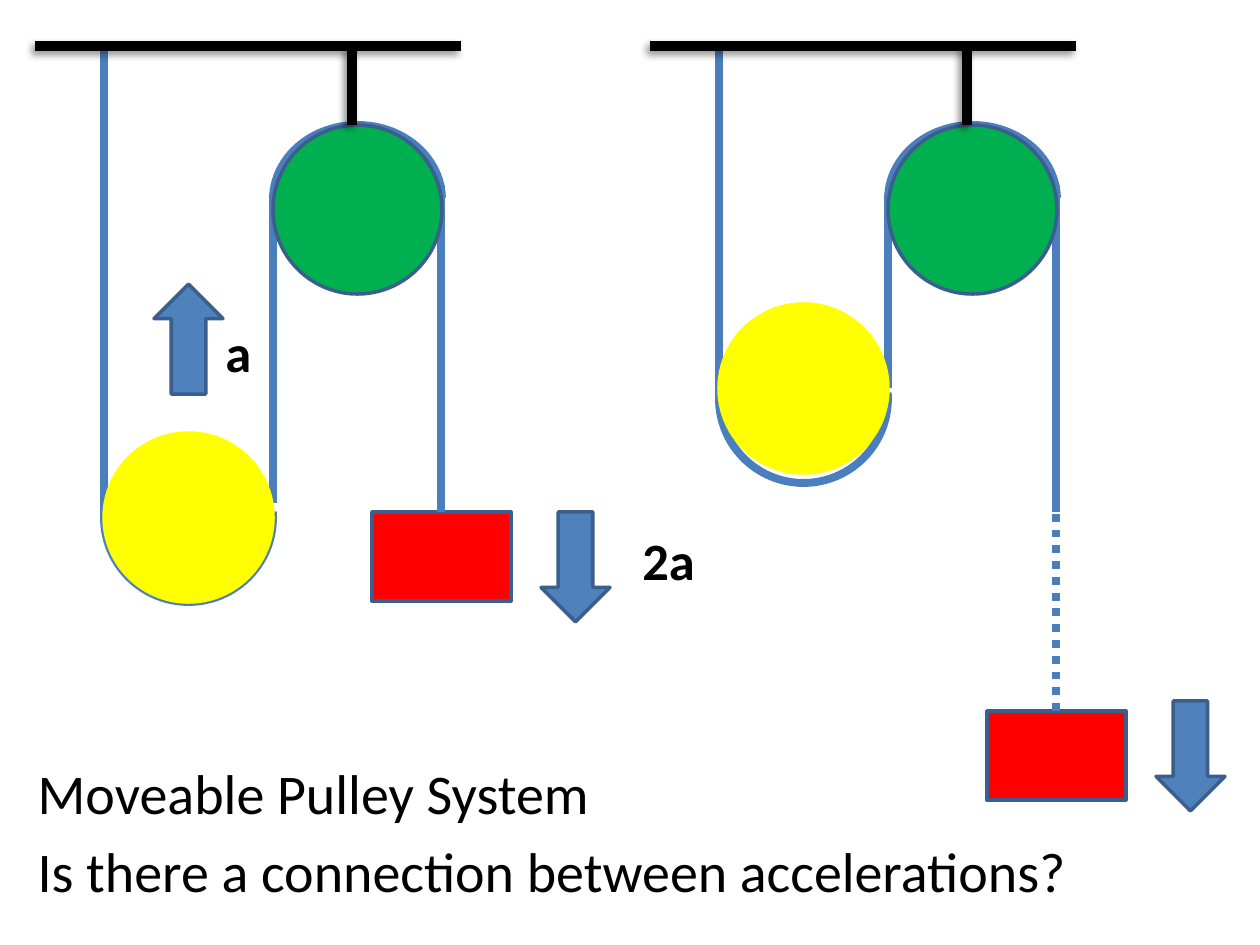
from dataclasses import dataclass

from lxml.etree import SubElement
from pptx import Presentation
from pptx.dml.color import RGBColor
from pptx.enum.dml import MSO_LINE
from pptx.enum.shapes import MSO_CONNECTOR, MSO_SHAPE
from pptx.oxml.ns import qn
from pptx.shapes.autoshape import Shape
from pptx.shapes.connector import Connector
from pptx.slide import Slide
from pptx.util import Emu, Pt

BLACK = RGBColor(0x00, 0x00, 0x00)
RED = RGBColor(0xFF, 0x00, 0x00)
GREEN = RGBColor(0x00, 0xB0, 0x50)
YELLOW = RGBColor(0xFF, 0xFF, 0x00)
BLUE = RGBColor(0x4F, 0x81, 0xBD)
ROPE = RGBColor(0x4B, 0x7E, 0xBC)
OUTLINE = RGBColor(0x3A, 0x5F, 0x8C)

FONT = "Calibri"
DIAMETER = 169
CEILING = 46
PULLEY_TOP = 125
BLOCK_TOP = 512
LEFT, MIDDLE, RIGHT = 104, 273, 441
UPPER_ARC = (105.85, 215.3)
LOWER_ARC = (213.58, 106.53)


@dataclass(frozen=True)
class PulleySystem:
    x: int
    wheel_top: int
    sling_top: int
    left_end: int
    middle_end: int
    block_top: int
    arrow_top: int


@dataclass(frozen=True)
class Label:
    text: str
    x: int
    y: int


SYSTEMS = (
    PulleySystem(0, 433, 433, 522, 503, 512, 512),
    PulleySystem(615, 304, 314, 403, 388, 711, 701),
)
LABELS = (Label("a", 213, 314), Label("2a", 630, 522))
LINES = ("Moveable Pulley System", "Is there a connection between accelerations?")


def px(n: int) -> Emu:
    return Emu(round(n * 914400 / 126))


def add_shape(s: Slide, kind: MSO_SHAPE, box: tuple[int, int, int, int],
              fill: RGBColor, line: RGBColor = OUTLINE) -> Shape:
    sp = s.shapes.add_shape(kind, *map(px, box))
    sp.shadow.inherit = False
    sp.fill.solid()
    sp.fill.fore_color.rgb = fill
    sp.line.color.rgb = line
    sp.line.width = Pt(2)
    return sp


def add_arc(s: Slide, box: tuple[int, int, int, int],
            angles: tuple[float, float]) -> None:
    sp = s.shapes.add_shape(MSO_SHAPE.ARC, *map(px, box))
    sp.shadow.inherit = False
    sp.adjustments[0], sp.adjustments[1] = angles
    sp.fill.background()
    sp.line.color.rgb = ROPE
    sp.line.width = Pt(4.5)


def add_line(s: Slide, ends: tuple[int, int, int, int], color: RGBColor = ROPE,
             width: float = 4.5) -> Connector:
    cxn = s.shapes.add_connector(MSO_CONNECTOR.STRAIGHT, *map(px, ends))
    cxn.line.color.rgb = color
    cxn.line.width = Pt(width)
    SubElement(cxn._element.spPr, qn("a:effectLst"))
    return cxn


def add_beam(s: Slide, ends: tuple[int, int, int, int]) -> None:
    cxn = add_line(s, ends, BLACK, 6)
    effects = cxn._element.spPr.find(qn("a:effectLst"))
    shadow = SubElement(effects, qn("a:outerShdw"), blurRad=str(Pt(4)),
                        dist=str(Pt(3)), dir=str(135 * 60000))
    color = SubElement(shadow, qn("a:srgbClr"), val=str(BLACK))
    SubElement(color, qn("a:alpha"), val="40000")


def add_system(s: Slide, system: PulleySystem) -> None:
    x = system.x
    left, middle, right = x + LEFT, x + MIDDLE, x + RIGHT
    add_shape(s, MSO_SHAPE.RECTANGLE, (x + 372, system.block_top, 139, 89), RED)
    add_line(s, (right, BLOCK_TOP, right, 185))
    add_arc(s, (middle, PULLEY_TOP, DIAMETER, 149), UPPER_ARC)
    add_line(s, (middle, system.middle_end, middle, 205))
    add_line(s, (left, system.left_end, left, CEILING))
    add_arc(s, (left, system.sling_top, DIAMETER, DIAMETER), LOWER_ARC)
    add_shape(s, MSO_SHAPE.OVAL, (middle, PULLEY_TOP, DIAMETER, DIAMETER), GREEN)
    add_shape(s, MSO_SHAPE.OVAL, (left, system.wheel_top, DIAMETER, DIAMETER),
              YELLOW, YELLOW)
    add_beam(s, (x + 35, CEILING, x + 461, CEILING))
    add_beam(s, (x + 352, CEILING, x + 352, PULLEY_TOP))
    add_arrow(s, x + 541, system.arrow_top)
    if system.block_top > BLOCK_TOP:
        dots = add_line(s, (right, system.block_top, right, BLOCK_TOP))
        dots.line.dash_style = MSO_LINE.ROUND_DOT


def add_arrow(s: Slide, x: int, y: int) -> Shape:
    return add_shape(s, MSO_SHAPE.DOWN_ARROW, (x, y, 69, 110), BLUE)


def add_label(s: Slide, label: Label) -> None:
    tf = s.shapes.add_textbox(px(label.x), px(label.y), px(89), px(77)).text_frame
    tf.word_wrap = True
    p = tf.paragraphs[0]
    p.text = label.text
    p.font.name = FONT
    p.font.size = Pt(30)
    p.font.bold = True
    p.font.color.rgb = BLACK


def fill_body(s: Slide) -> None:
    body = s.placeholders[1]
    body.left, body.top, body.width, body.height = map(px, (25, 752, 1134, 193))
    tf = body.text_frame
    tf.text = "\n".join(LINES)
    for p in tf.paragraphs:
        SubElement(p._p.get_or_add_pPr(), qn("a:buNone"))
        p.font.name = FONT
        p.font.size = Pt(32)
        p.font.color.rgb = BLACK


def main() -> None:
    prs = Presentation()
    prs.slide_width, prs.slide_height = px(1260), px(945)
    s = prs.slides.add_slide(prs.slide_layouts[1])
    title = s.shapes.title._element
    title.getparent().remove(title)
    fill_body(s)
    for system in SYSTEMS:
        add_system(s, system)
    add_arrow(s, 154, 284).rotation = 180
    for label in LABELS:
        add_label(s, label)
    prs.save("out.pptx")


if __name__ == "__main__":
    main()
